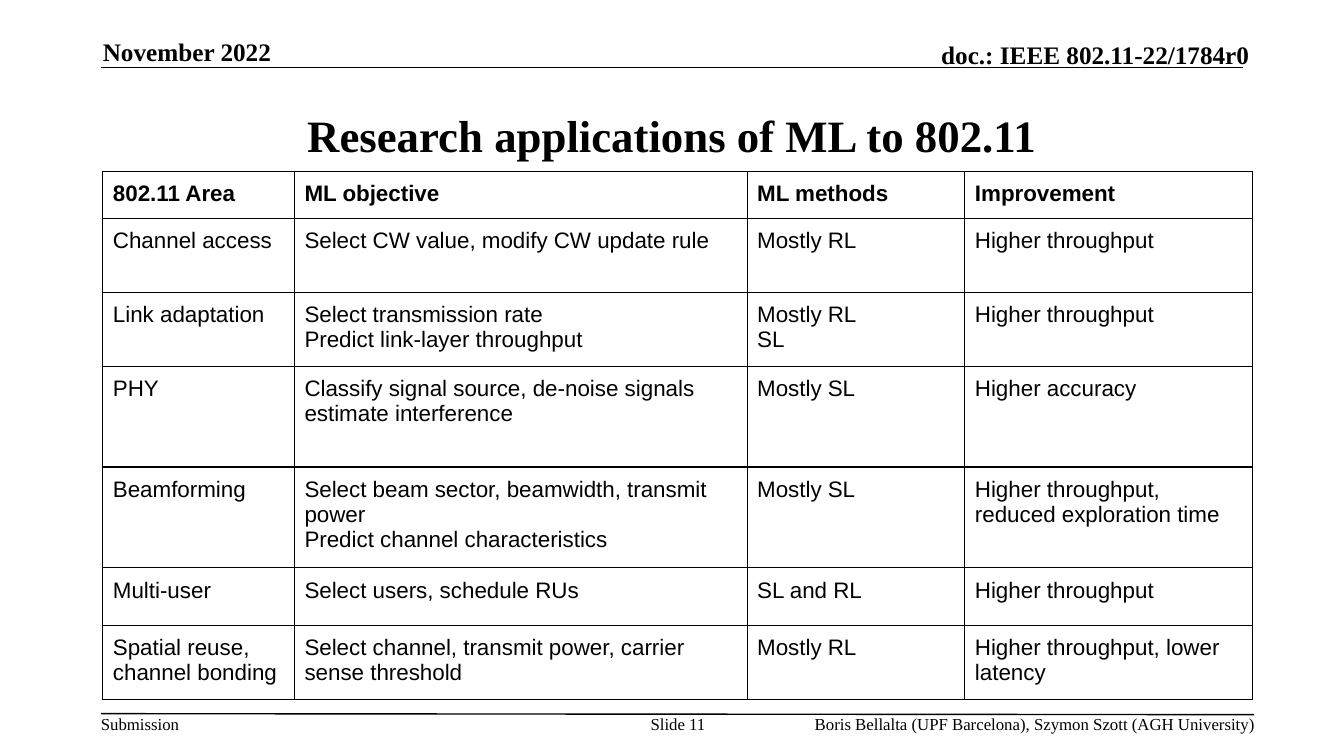
from dataclasses import dataclass

from lxml.etree import SubElement
from pptx import Presentation
from pptx.dml.color import RGBColor
from pptx.enum.shapes import MSO_CONNECTOR
from pptx.enum.text import MSO_ANCHOR, PP_ALIGN
from pptx.oxml.ns import qn
from pptx.slide import Slide
from pptx.table import _Cell
from pptx.text.text import TextFrame
from pptx.util import Inches, Pt

BLACK = "000000"
SERIF = "Times New Roman"
SANS = "Arial"


@dataclass
class Label:
    text: str
    left: float
    top: float
    width: float
    height: float
    size: int = 12
    bold: bool = False
    align: PP_ALIGN = PP_ALIGN.LEFT
    anchor: MSO_ANCHOR = MSO_ANCHOR.TOP


@dataclass
class Rule:
    left: float
    top: float
    right: float
    bottom: float


LABELS = [
    Label("November 2022", 1.02, 0.36, 2.73, 0.3, 18, True, anchor=MSO_ANCHOR.BOTTOM),
    Label("doc.: IEEE 802.11-22/1784r0", 7.29, 0.39, 5.1, 0.3, 18, True,
          PP_ALIGN.RIGHT, MSO_ANCHOR.BOTTOM),
    Label("Research applications of ML to 802.11", 1, 0.75, 11.33, 1.17, 32, True,
          PP_ALIGN.CENTER, MSO_ANCHOR.MIDDLE),
    Label("Submission", 1, 7.08, 0.79, 0.2),
    Label("Slide 11", 6.34, 7.08, 0.77, 0.4, align=PP_ALIGN.CENTER),
    Label("Boris Bellalta (UPF Barcelona), Szymon Szott (AGH University)",
          7.81, 7.08, 4.64, 0.2, align=PP_ALIGN.RIGHT),
]
RULES = [Rule(1, 0.67, 12.33, 0.67), Rule(1, 7.08, 12.44, 7.09)]

WIDTHS = [1.9, 4.49, 2.16, 2.85]
HEIGHTS = [0.47, 0.73, 0.73, 1, 1, 0.57, 0.67]
ROWS = [
    ["802.11 Area", "ML objective", "ML methods", "Improvement"],
    ["Channel access", "Select CW value, modify CW update rule", "Mostly RL",
     "Higher throughput"],
    ["Link adaptation", "Select transmission rate\nPredict link-layer throughput",
     "Mostly RL\nSL", "Higher throughput"],
    ["PHY", "Classify signal source, de-noise signals\nestimate interference",
     "Mostly SL", "Higher accuracy"],
    ["Beamforming",
     "Select beam sector, beamwidth, transmit power\nPredict channel characteristics",
     "Mostly SL", "Higher throughput, reduced exploration time"],
    ["Multi-user", "Select users, schedule RUs", "SL and RL", "Higher throughput"],
    ["Spatial reuse, channel bonding",
     "Select channel, transmit power, carrier sense threshold", "Mostly RL",
     "Higher throughput, lower latency"],
]


def color(code: str) -> RGBColor:
    return RGBColor.from_string(code)


def write(frame: TextFrame, text: str, *, font: str, size: int, bold: bool = False,
          align: PP_ALIGN = PP_ALIGN.LEFT) -> None:
    frame.word_wrap = True
    frame.text = text
    for line in frame.paragraphs:
        line.alignment = align
        for run in line.runs:
            run.font.name = font
            run.font.size = Pt(size)
            run.font.bold = bold
            run.font.color.rgb = color(BLACK)


def draw_label(slide: Slide, label: Label) -> None:
    box = slide.shapes.add_textbox(Inches(label.left), Inches(label.top),
                                   Inches(label.width), Inches(label.height))
    frame = box.text_frame
    frame.margin_left = frame.margin_right = 0
    frame.margin_top = frame.margin_bottom = 0
    frame.vertical_anchor = label.anchor
    write(frame, label.text, font=SERIF, size=label.size, bold=label.bold,
          align=label.align)


def draw_rule(slide: Slide, rule: Rule) -> None:
    line = slide.shapes.add_connector(MSO_CONNECTOR.STRAIGHT, Inches(rule.left),
                                      Inches(rule.top), Inches(rule.right),
                                      Inches(rule.bottom))
    line.line.color.rgb = color(BLACK)
    line.line.width = Pt(1)
    SubElement(line._element.spPr, qn("a:effectLst"))


def draw_cell(cell: _Cell, text: str, bold: bool) -> None:
    cell.margin_left = cell.margin_right = Inches(0.1)
    cell.margin_top = cell.margin_bottom = Inches(0.1)
    props = cell._tc.get_or_add_tcPr()
    for side in ("lnL", "lnR", "lnT", "lnB"):
        edge = SubElement(props, qn(f"a:{side}"), w=str(Pt(1)))
        fill = SubElement(edge, qn("a:solidFill"))
        SubElement(fill, qn("a:srgbClr"), val=BLACK)
    cell.fill.background()
    write(cell.text_frame, text, font=SANS, size=16, bold=bold)


def draw_table(slide: Slide) -> None:
    frame = slide.shapes.add_table(len(ROWS), len(WIDTHS), Inches(1.02), Inches(1.7),
                                   Inches(sum(WIDTHS)), Inches(sum(HEIGHTS)))
    table = frame.table
    table.first_row = table.horz_banding = False
    for column, width in zip(table.columns, WIDTHS):
        column.width = Inches(width)
    for index, (row, height, texts) in enumerate(zip(table.rows, HEIGHTS, ROWS)):
        row.height = Inches(height)
        for cell, text in zip(row.cells, texts):
            draw_cell(cell, text, index == 0)


def main() -> None:
    deck = Presentation()
    deck.slide_width = Inches(13.33)
    deck.slide_height = Inches(7.5)
    slide = deck.slides.add_slide(deck.slide_layouts[6])
    for rule in RULES:
        draw_rule(slide, rule)
    for label in LABELS:
        draw_label(slide, label)
    draw_table(slide)
    deck.save("out.pptx")


if __name__ == "__main__":
    main()
